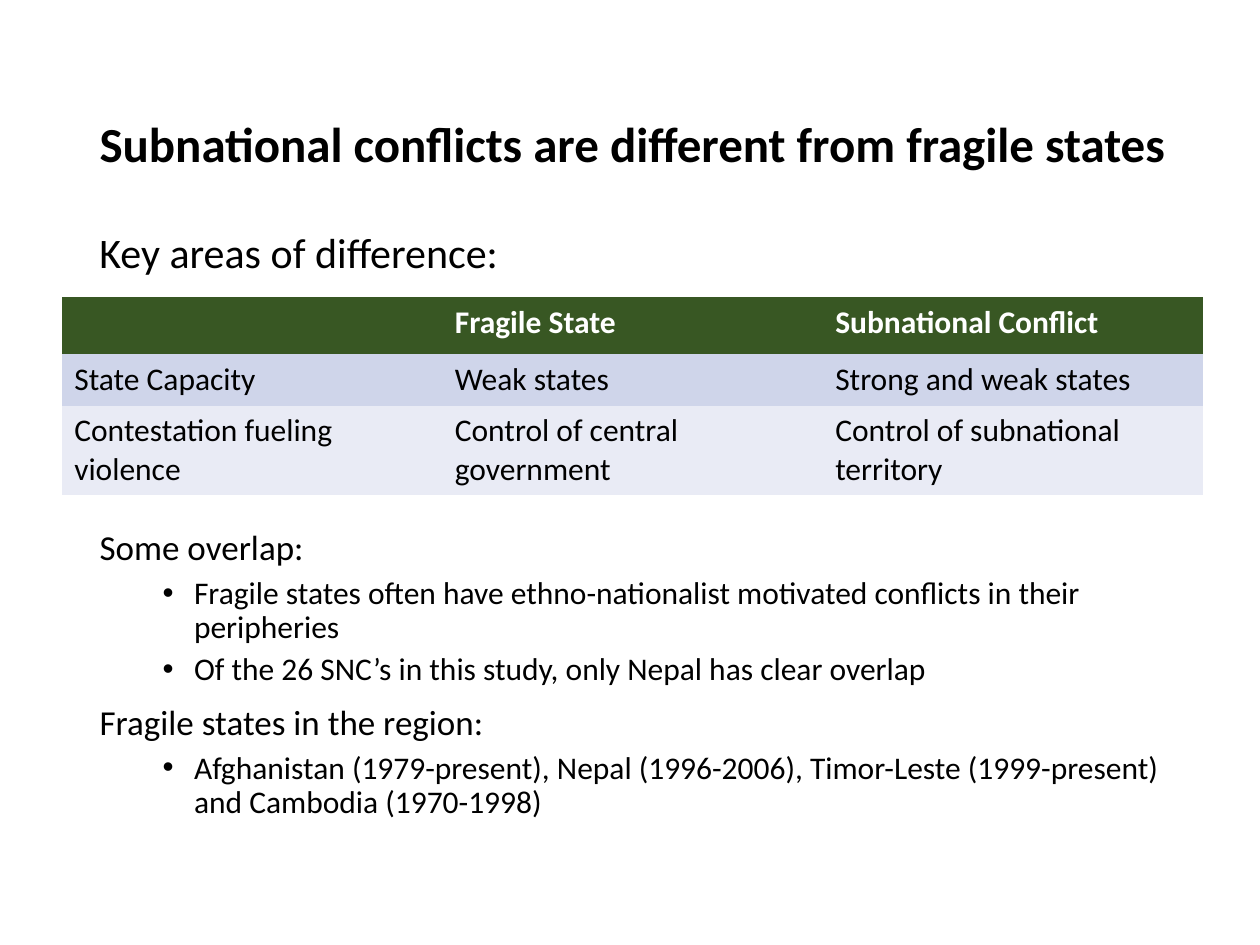
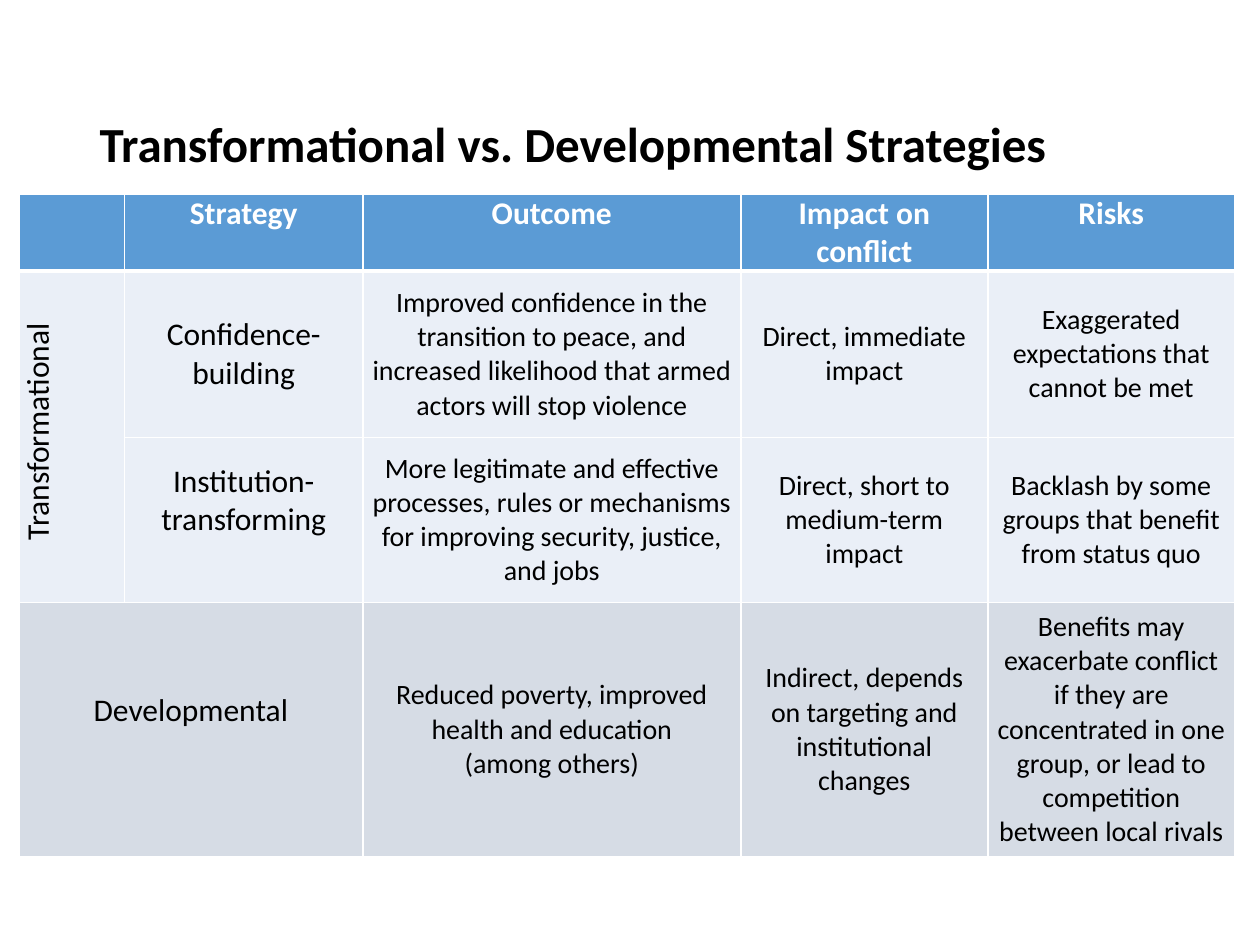
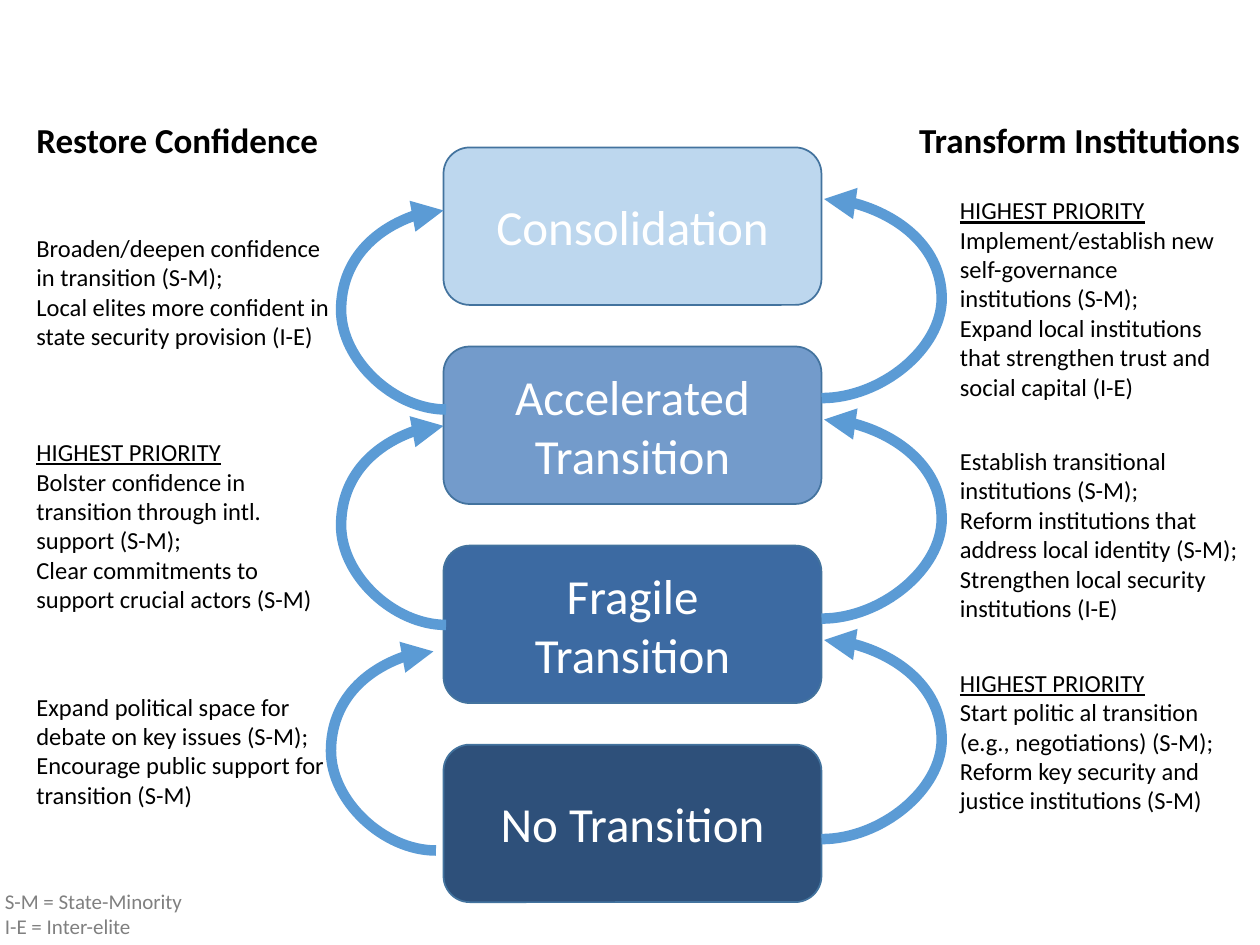
from pptx import Presentation
from pptx.dml.color import RGBColor
from pptx.enum.shapes import MSO_CONNECTOR as Link, MSO_SHAPE as Shape
from pptx.enum.text import MSO_ANCHOR as Anchor, MSO_AUTO_SIZE as Fit, PP_ALIGN as Align
from pptx.oxml.ns import qn
from pptx.util import Pt
from lxml.etree import SubElement, Element

PX = 9144
FONT = "Calibri"
BLACK, WHITE, GREY = "000000", "FFFFFF", "808080"
BLUE, OUTLINE = "5B9BD5", "43739E"
PLAIN_TABLE = "{2D5ABB26-0587-4C30-8999-92F81FD0307C}"
PRIORITY = "HIGHEST PRIORITY"
BODY_LEVELS = [
    {"size": 20, "space": 10, "left": 0, "hang": 0},
    {"size": 18, "space": 5, "left": 75, "hang": -25},
]

DIFFERENCES = [
    ["", "Fragile State", "Subnational Conflict"],
    ["State Capacity", "Weak states", "Strong and weak states"],
    ["Contestation fueling violence", "Control of central government",
     "Control of subnational territory"],
]
OVERLAP = [
    (0, "Some overlap:"),
    (1, "Fragile states often have ethno-nationalist motivated conflicts in their peripheries"),
    (1, "Of the 26 SNC’s in this study, only Nepal has clear overlap"),
    (0, "Fragile states in the region:"),
    (1, "Afghanistan (1979-present), Nepal (1996-2006), Timor-Leste (1999-present) "
        "and Cambodia (1970-1998)"),
]
STRATEGIES = [
    ["", "Strategy", "Outcome", "Impact on conflict", "Risks"],
    ["Transformational", "Confidence-building",
     "Improved confidence in the transition to peace, and increased likelihood "
     "that armed actors will stop violence",
     "Direct, immediate impact", "Exaggerated expectations that cannot be met"],
    ["", "Institution-transforming",
     "More legitimate and effective processes, rules or mechanisms for improving "
     "security, justice, and jobs",
     "Direct, short to medium-term impact",
     "Backlash by some groups that benefit from status quo"],
    ["Developmental", "",
     "Reduced poverty, improved health and education\n(among others)",
     "Indirect, depends on targeting and institutional changes",
     "Benefits may exacerbate conflict if they are concentrated in one group, "
     "or lead to competition between local rivals"],
]
STAGES = [
    ("Consolidation", "BDD7EE"),
    ("Accelerated Transition", "739BCB"),
    ("Fragile Transition", "3C6AA2"),
    ("No Transition", "2E507A"),
]
CONFIDENCE_NOTES = [
    (180, 104, ["Broaden/deepen confidence in transition (S-M);",
                "Local elites more confident in state security provision (I-E)"]),
    (342, 151, [PRIORITY, "Bolster confidence in transition through intl. support (S-M);",
                "Clear commitments to support crucial actors (S-M)"]),
    (544, 104, ["Expand political space for debate on key issues (S-M);",
                "Encourage public support for transition (S-M)"]),
]
INSTITUTION_NOTES = [
    (150, 175, 233, [PRIORITY, "Implement/establish new self-governance institutions (S-M);",
                     "Expand local institutions that strengthen trust and social capital (I-E)"]),
    (349, 151, 250, ["Establish transitional institutions (S-M);",
                     "Reform institutions that address local identity (S-M);",
                     "Strengthen local security institutions (I-E)"]),
    (525, 128, 233, [PRIORITY, "Start politic al transition (e.g., negotiations) (S-M);",
                     "Reform key security and justice institutions (S-M)"]),
]


def px(*lengths):
    return [round(n * PX) for n in lengths]


def rgb(color):
    return RGBColor.from_string(color)


def apply(obj, formats):
    for name, value in formats.items():
        setattr(obj, name, value)


def put(p, text, size, color=BLACK, bold=False, **formats):
    apply(p, formats)
    r = p.add_run()
    r.text = text
    apply(r.font, {"name": FONT, "size": Pt(size), "bold": bold,
                   "underline": text == PRIORITY})
    r.font.color.rgb = rgb(color)


def write(tf, lines, size, **formats):
    for i, line in enumerate(lines):
        p = tf.add_paragraph() if i else tf.paragraphs[0]
        put(p, line, size, **formats)


def place(sp, box):
    apply(sp, dict(zip(("left", "top", "width", "height"), px(*box))))


def indent(p, left, hang=0):
    pPr = p._p.get_or_add_pPr()
    pPr.set("marL", str(left * PX))
    pPr.set("indent", str(hang * PX))
    return pPr


def add_title(s, text, width):
    sp = s.shapes.title
    place(sp, (69, 80, width, 73))
    apply(sp.text_frame, {"auto_size": Fit.NONE, "vertical_anchor": Anchor.MIDDLE})
    write(sp.text_frame, [text], 28, bold=True, alignment=Align.LEFT, line_spacing=0.9)


def add_body(s, items, box):
    sp = s.placeholders[1]
    place(sp, box)
    tf = sp.text_frame
    tf.auto_size = Fit.NONE
    for i, (level, text) in enumerate(items):
        look = BODY_LEVELS[level]
        p = tf.add_paragraph() if i else tf.paragraphs[0]
        pPr = indent(p, look["left"], look["hang"])
        if level:
            SubElement(pPr, qn("a:buChar"), char="•")
        else:
            SubElement(pPr, qn("a:buNone"))
        put(p, text, look["size"], level=level, line_spacing=0.9,
            space_before=Pt(look["space"] if i else 0))


def add_text(s, lines, box, size, fit=Fit.SHAPE_TO_FIT_TEXT, anchor=Anchor.TOP, **formats):
    tf = s.shapes.add_textbox(*px(*box)).text_frame
    apply(tf, {"word_wrap": True, "auto_size": fit, "vertical_anchor": anchor})
    write(tf, lines, size, **formats)


def add_grid(s, at, cols, rows):
    frame = s.shapes.add_table(len(rows), len(cols), *px(*at, sum(cols), sum(rows)))
    table = frame.table
    table._tbl.tblPr.find(qn("a:tableStyleId")).text = PLAIN_TABLE
    for col, width in zip(table.columns, px(*cols)):
        col.width = width
    for row, height in zip(table.rows, px(*rows)):
        row.height = height
    return table


def paint(cell, color):
    cell.fill.solid()
    cell.fill.fore_color.rgb = rgb(color)


def border(cell, bottom):
    tcPr = cell._tc.get_or_add_tcPr()
    for i, (side, width) in enumerate({"L": 1, "R": 1, "T": 1, "B": bottom}.items()):
        ln = Element(qn(f"a:ln{side}"), w=str(Pt(width)))
        SubElement(SubElement(ln, qn("a:solidFill")), qn("a:srgbClr"), val=WHITE)
        tcPr.insert(i, ln)


def add_difference_table(s):
    table = add_grid(s, (49, 236), [302] * 3, [45, 41, 70])
    for i, fill in enumerate(["385723", "CFD5EA", "E9EBF5"]):
        for j, text in enumerate(DIFFERENCES[i]):
            cell = table.cell(i, j)
            paint(cell, fill)
            if text:
                write(cell.text_frame, [text], 18, color=BLACK if i else WHITE, bold=not i)


def add_strategy_table(s):
    table = add_grid(s, (15, 154), [84, 189, 300, 196, 196], [60, 132, 131, 202])
    table.cell(1, 0).merge(table.cell(2, 0))
    table.cell(3, 0).merge(table.cell(3, 1))
    side, raised = px(7, 30)
    for i, fill in enumerate([BLUE, "EAEFF7", "EAEFF7", "D6DCE5"]):
        for j, text in enumerate(STRATEGIES[i]):
            cell = table.cell(i, j)
            paint(cell, fill)
            border(cell, 1 if i else 3)
            lifted = text in ("Institution-transforming", "Developmental")
            apply(cell, {"margin_left": side, "margin_right": side, "margin_top": 0,
                         "margin_bottom": raised if lifted else 0,
                         "vertical_anchor": Anchor.MIDDLE if i else Anchor.TOP})
            if text:
                write(cell.text_frame, text.split("\n"), 16 if i and j > 1 else 18,
                      color=BLACK if i else WHITE, bold=not i, alignment=Align.CENTER)
    group = table.cell(1, 0)
    group._tc.get_or_add_tcPr().set("vert", "vert270")
    p = group.text_frame.paragraphs[0]
    indent(p, 8)
    p.space_after = Pt(6)


def add_stage(s, text, fill, top):
    sp = s.shapes.add_shape(Shape.ROUNDED_RECTANGLE, *px(352, top, 300, 125))
    sp.shadow.inherit = False
    sp.fill.solid()
    sp.fill.fore_color.rgb = rgb(fill)
    sp.line.color.rgb = rgb(OUTLINE)
    sp.line.width = Pt(1)
    apply(sp.text_frame, {"word_wrap": True, "vertical_anchor": Anchor.MIDDLE})
    write(sp.text_frame, [text], 28, color=WHITE, alignment=Align.CENTER)


def add_arc(s, x, top, bulge, left_side=False):
    low, high = top + 158, top
    ends = (x, high, x + 2, low) if left_side else (x, low, x + 2, high)
    c = s.shapes.add_connector(Link.CURVE, *px(*ends))
    c.line.color.rgb = rgb(BLUE)
    c.line.width = Pt(6)
    spPr = c._element.spPr
    if left_side:
        spPr.find(qn("a:xfrm")).set("rot", "10800000")
    guides = spPr.find(qn("a:prstGeom")).get_or_add_avLst()
    SubElement(guides, qn("a:gd"), name="adj1", fmla=f"val {bulge * 50000}")
    SubElement(spPr.find(qn("a:ln")), qn("a:tailEnd"), type="triangle")
    SubElement(spPr, qn("a:effectLst"))


def add_transition_diagram(s):
    for i, (text, fill) in enumerate(STAGES):
        add_stage(s, text, fill, 117 + 158 * i)
    for i in range(3):
        add_arc(s, 652, 158 + 175 * i, 95)
    for x, top in [(352, 167), (352, 338), (344, 517)]:
        add_arc(s, x, top, 83, left_side=True)
    add_text(s, ["Restore Confidence"], (19, 89, 300, 44), 20, bold=True)
    add_text(s, ["Transform Institutions"], (611, 89, 383, 44), 20, bold=True,
             alignment=Align.RIGHT)
    for top, height, lines in CONFIDENCE_NOTES:
        add_text(s, lines, (19, top, 258, height), 14)
    for top, height, width, lines in INSTITUTION_NOTES:
        add_text(s, lines, (752, top, width, height), 14)
    add_text(s, ["S-M = State-Minority", "I-E = Inter-elite"], (-6, 700, 325, 50), 12,
             fit=Fit.NONE, anchor=Anchor.MIDDLE, color=GREY)


def main():
    prs = Presentation()
    prs.slide_width, prs.slide_height = px(1000, 750)
    content, title_only, blank = (prs.slide_layouts[i] for i in (1, 5, 6))

    s = prs.slides.add_slide(content)
    add_title(s, "Subnational conflicts are different from fragile states", 909)
    add_body(s, OVERLAP, (69, 416, 862, 276))
    add_difference_table(s)
    add_text(s, ["Key areas of difference:"], (69, 179, 862, 50), 24, fit=Fit.NONE,
             line_spacing=0.9)

    s = prs.slides.add_slide(title_only)
    add_title(s, "Transformational vs. Developmental Strategies", 862)
    add_strategy_table(s)

    add_transition_diagram(prs.slides.add_slide(blank))
    prs.save("out.pptx")


if __name__ == "__main__":
    main()
